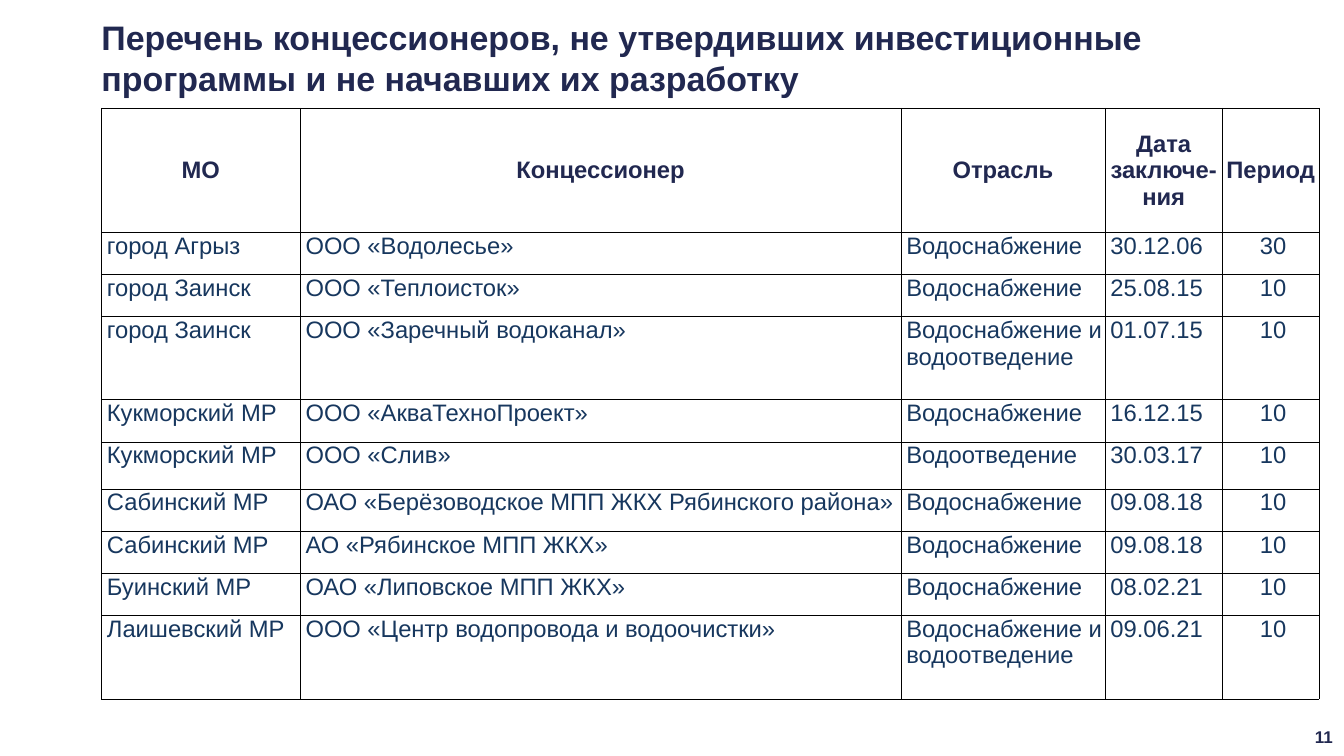
from lxml import etree
from pptx import Presentation, util as u
from pptx.dml import color
from pptx.enum import shapes, text
from pptx.oxml import ns

PX = u.Inches(1) // 100
NAVY, BLUE, BLACK = "212850", "17375E", "000000"
CENTER, LEFT = text.PP_ALIGN.CENTER, text.PP_ALIGN.LEFT
TOP, MIDDLE = text.MSO_ANCHOR.TOP, text.MSO_ANCHOR.MIDDLE

TITLE = ("Перечень концессионеров, не утвердивших инвестиционные "
         "программы и не начавших их разработку")
HEADERS = ["МО", "Концессионер", "Отрасль", "Дата заключе-ния", "Период"]
WATER, SEWAGE = "Водоснабжение", "Водоотведение"
BOTH = "Водоснабжение и водоотведение"
CONCESSIONS = [
    ["город Агрыз", "ООО «Водолесье»", WATER, "30.12.06", "30"],
    ["город Заинск", "ООО «Теплоисток»", WATER, "25.08.15", "10"],
    ["город Заинск", "ООО «Заречный водоканал»", BOTH, "01.07.15", "10"],
    ["Кукморский МР", "ООО «АкваТехноПроект»", WATER, "16.12.15", "10"],
    ["Кукморский МР", "ООО «Слив»", SEWAGE, "30.03.17", "10"],
    ["Сабинский МР", "ОАО «Берёзоводское МПП ЖКХ Рябинского района»", WATER, "09.08.18", "10"],
    ["Сабинский МР", "АО «Рябинское МПП ЖКХ»", WATER, "09.08.18", "10"],
    ["Буинский МР", "ОАО «Липовское МПП ЖКХ»", WATER, "08.02.21", "10"],
    ["Лаишевский МР", "ООО «Центр водопровода и водоочистки»", BOTH, "09.06.21", "10"],
]
COLUMN_WIDTHS = [325, 983, 334, 192, 158]
ROW_HEIGHTS = [203, 69, 69, 136, 69, 77, 69, 69, 69, 137]


def rgb(value):
    """Turn a hex string into a colour."""
    return color.RGBColor.from_string(value)


def px(*lengths):
    """Turn px lengths into EMU."""
    return [length * PX for length in lengths]


def apply(target, values):
    """Set every attribute in a dict of format values."""
    for name, value in values.items():
        setattr(target, name, value)


def margins(left, top, right, bottom):
    """Give the four text margins as format values."""
    names = ["margin_left", "margin_top", "margin_right", "margin_bottom"]
    return dict(zip(names, px(left, top, right, bottom)))


def write(frame, words, size, fill, bold=True, align=LEFT, indent=0):
    """Write one formatted paragraph into a text frame."""
    frame.word_wrap = True
    paragraph = frame.paragraphs[0]
    paragraph._p.get_or_add_pPr().set("marL", str(indent * PX))
    paragraph.alignment = align
    run = paragraph.add_run()
    run.text = words
    apply(run.font, {"name": "Arial", "size": u.Pt(size), "bold": bold})
    run.font.color.rgb = rgb(fill)


def add_borders(cell):
    """Draw a thin line on all four sides of a cell."""
    properties = cell._tc.get_or_add_tcPr()
    for index, side in enumerate(["lnL", "lnR", "lnT", "lnB"]):
        line = etree.Element(ns.qn(f"a:{side}"), w=str(u.Pt(0.5)))
        solid = etree.SubElement(line, ns.qn("a:solidFill"))
        etree.SubElement(solid, ns.qn("a:srgbClr"), val=BLACK)
        properties.insert(index, line)


def add_title(slide, box):
    """Place the slide title in its box."""
    frame = slide.shapes.add_textbox(*px(*box)).text_frame
    apply(frame, margins(0, 0, 0, 0))
    write(frame, TITLE, 40, NAVY)


def add_concessions(slide, box):
    """Place the table of concessions in its box."""
    rows = [HEADERS] + CONCESSIONS
    table = slide.shapes.add_table(len(rows), len(HEADERS), *px(*box)).table
    apply(table, {"first_row": False, "horz_banding": False})
    for column, width in zip(table.columns, COLUMN_WIDTHS):
        column.width = width * PX
    for row, height in zip(table.rows, ROW_HEIGHTS):
        row.height = height * PX
    for row_index, row in enumerate(rows):
        header = row_index == 0
        for column_index, words in enumerate(row):
            cell = table.cell(row_index, column_index)
            apply(cell, margins(1, 1, 1, 0))
            cell.vertical_anchor = MIDDLE if header else TOP
            cell.fill.background()
            add_borders(cell)
            centred = header or column_index == len(HEADERS) - 1
            write(cell.text_frame, words, 28, NAVY if header else BLUE, bold=header,
                  align=CENTER if centred else LEFT, indent=0 if header else 8)


def add_page_number(slide, box):
    """Place the page number in its rounded box."""
    shape = slide.shapes.add_shape(shapes.MSO_SHAPE.ROUNDED_RECTANGLE, *px(*box))
    shape.shadow.inherit = False
    shape.fill.background()
    shape.line.fill.background()
    apply(shape.text_frame, margins(10, 5, 10, 5) | {"vertical_anchor": MIDDLE})
    write(shape.text_frame, "11", 20, NAVY, align=CENTER)


def main():
    """Build and save the slide."""
    presentation = Presentation()
    apply(presentation, {"slide_width": 2199 * PX, "slide_height": 1237 * PX})
    slide = presentation.slides.add_slide(presentation.slide_layouts[6])
    add_page_number(slide, (2130, 1176, 72, 59))
    add_title(slide, (166, 27, 1908, 135))
    add_concessions(slide, (166, 177, sum(COLUMN_WIDTHS), sum(ROW_HEIGHTS)))
    presentation.save("out.pptx")


if __name__ == "__main__":
    main()
